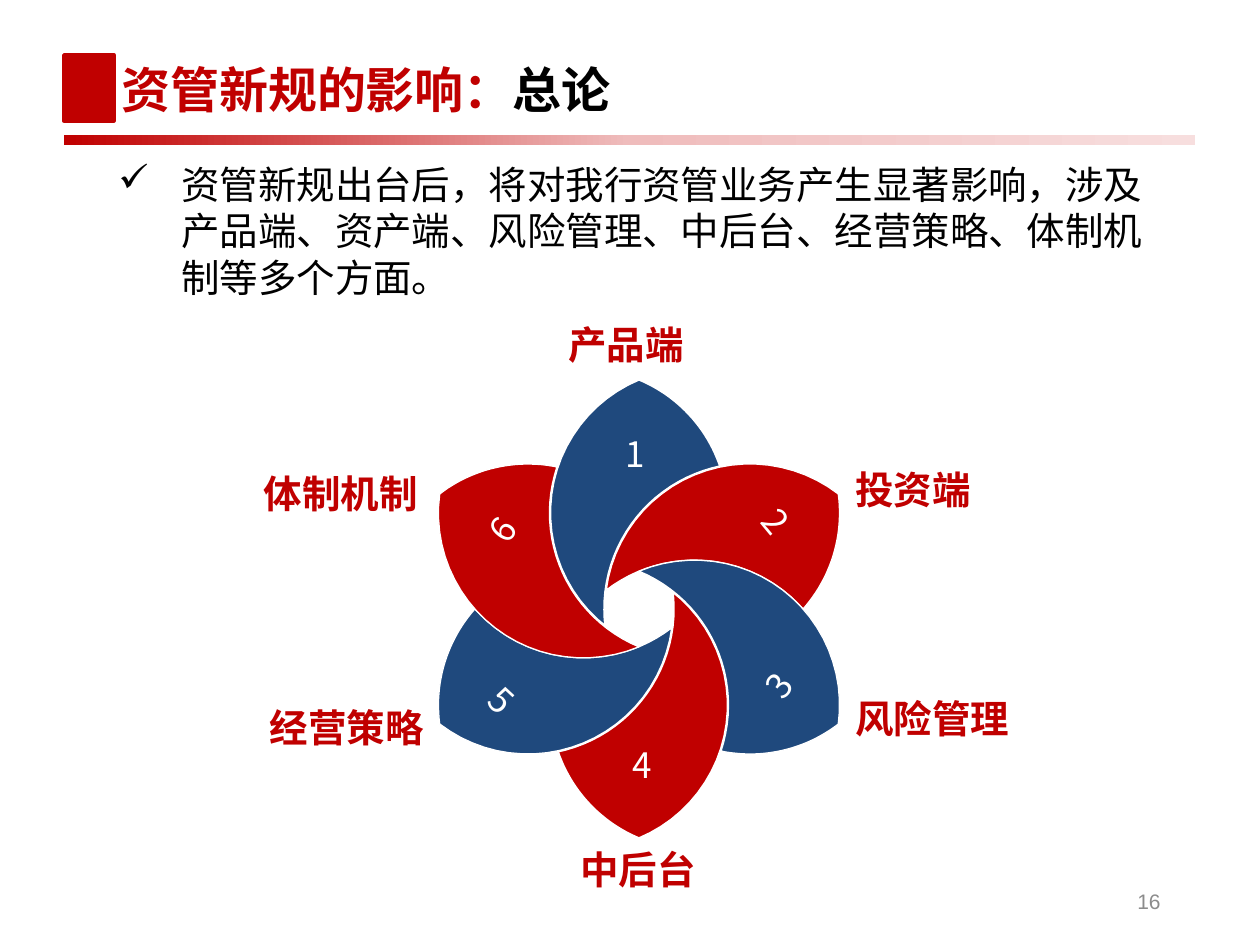
from copy import deepcopy
from dataclasses import dataclass
from math import cos, radians, sin

from lxml.etree import SubElement as Sub
from pptx import Presentation
from pptx.dml.color import RGBColor as Rgb
from pptx.enum.text import MSO_ANCHOR as Anchor, MSO_AUTO_SIZE as Fit, PP_ALIGN as Align
from pptx.oxml.ns import qn
from pptx.util import Pt

SCALE = 914400 / 126
COLORS = {"red": "C00000", "blue": "1F497D", "white": "FFFFFF", "black": "000000",
          "gray": "8C8C8C", "rose": "EFBCBC", "pale": "F7DEDE"}
CJK = "Noto Sans CJK SC"
HUB = (639, 609)   # centre of the flower
ORBIT = 111        # hub to the centre of each arc
RADIUS = 145


@dataclass
class Petal:
    num: int
    color: str
    line: float
    turn: float
    pad: tuple[int, int, int, int]
    lead: float | None = None


@dataclass
class Label:
    text: str
    box: tuple[int, int, int, int]
    align: Align


PETALS = [
    Petal(1, "blue", 2, 0, (0, 0, 0, 100)),
    Petal(4, "red", 2, 0, (0, 100, 0, 0)),
    Petal(2, "red", 0.75, 50.4, (10, 0, 0, 118), 1.2),
    Petal(3, "blue", 0.75, 308.2, (10, 100, 0, 0), 1.2),
    Petal(5, "blue", 0.75, 42.9, (0, 100, 20, 0), 1.2),
    Petal(6, "red", 0.75, 306.7, (0, 0, 0, 118), 1.2),
]
LABELS = [
    Label("产品端", (556, 315, 159, 59), Align.LEFT),
    Label("投资端", (843, 460, 159, 59), Align.LEFT),
    Label("风险管理", (843, 689, 208, 59), Align.LEFT),
    Label("中后台", (534, 840, 208, 59), Align.CENTER),
    Label("经营策略", (228, 698, 208, 59), Align.RIGHT),
    Label("体制机制", (222, 464, 208, 59), Align.RIGHT),
]
# One petal: arc centre's bearing, start and end angle on that arc, in degrees
ARCS = [(-60, -112.5, -232.5), (0, 172.5, 258.5), (-120, -18.5, -67.5)]
STEPS = 24


def px(n: float) -> int:
    return round(n * SCALE)


def rgb(name: str) -> Rgb:
    return Rgb.from_string(COLORS[name])


def style(obj, **values) -> None:
    for key, val in values.items():
        setattr(obj, key, val)


def write(para, text: str, size: float, color: str, bold=False, face=CJK) -> None:
    run = para.add_run()
    run.text = text
    style(run.font, size=Pt(size), bold=bold, name=face)
    run.font.color.rgb = rgb(color)
    Sub(run.font._element, qn("a:ea"), typeface=face)


def add_box(slide, box: tuple, **frame):
    """Add a wrapping text box and return its first paragraph."""
    text = slide.shapes.add_textbox(*map(px, box)).text_frame
    style(text, word_wrap=True, **frame)
    return text.paragraphs[0]


def add_rect(slide, box: tuple):
    rect = slide.shapes.add_shape(1, *map(px, box))
    rect.shadow.inherit = False
    return rect


def spin(x: float, y: float, deg: float) -> tuple[float, float]:
    c, s = cos(radians(deg)), sin(radians(deg))
    return x * c - y * s, x * s + y * c


def outline(num: int) -> list[tuple[float, float]]:
    """Points of a petal about the hub; each is a sixth of a turn on."""
    pts = []
    for bear, start, end in ARCS:
        cx, cy = spin(ORBIT, 0, bear)
        for i in range(STEPS):
            dx, dy = spin(RADIUS, 0, start + (end - start) * i / STEPS)
            pts.append(spin(cx + dx, cy + dy, 60 * (num - 1)))
    return pts


def add_petal(slide, petal: Petal) -> None:
    """Draw the petal in its unturned frame, then turn it into place."""
    flat = [spin(x, y, -petal.turn) for x, y in outline(petal.num)]
    mx, my = ((min(v) + max(v)) / 2 for v in zip(*flat))
    cx, cy = spin(mx, my, petal.turn)
    pts = [(px(HUB[0] + cx + x - mx), px(HUB[1] + cy + y - my)) for x, y in flat]
    pen = slide.shapes.build_freeform(*pts[0])
    pen.add_line_segments(pts[1:], close=True)
    shape = pen.convert_to_shape()
    shape.rotation = petal.turn
    shape.shadow.inherit = False
    shape.fill.solid()
    shape.fill.fore_color.rgb = rgb(petal.color)
    shape.line.color.rgb = rgb("white")
    shape.line.width = Pt(petal.line)
    sides = ("margin_left", "margin_top", "margin_right", "margin_bottom")
    text = shape.text_frame
    style(text, vertical_anchor=Anchor.MIDDLE, word_wrap=True,
          **dict(zip(sides, map(px, petal.pad))))
    para = text.paragraphs[0]
    style(para, alignment=Align.CENTER, line_spacing=petal.lead)
    write(para, str(petal.num), 20, "white")


def add_header(slide) -> None:
    mark = add_rect(slide, (64, 55, 50, 66))
    mark.fill.solid()
    mark.fill.fore_color.rgb = mark.line.color.rgb = rgb("red")
    mark.line.width = Pt(2)
    bar = add_rect(slide, (64, 135, 1131, 10))
    bar.line.fill.background()
    bar.fill.gradient()
    bar.fill.gradient_angle = 0
    stops = bar._element.spPr.find(".//" + qn("a:gsLst"))
    stops.insert(1, deepcopy(stops[0]))
    for stop, pos, name in zip(bar.fill.gradient_stops, (0, 0.5, 1), ("red", "rose", "pale")):
        stop.position = pos
        stop.color.rgb = rgb(name)
    title = add_box(slide, (109, 53, 1088, 72), auto_size=Fit.SHAPE_TO_FIT_TEXT)
    write(title, "资管新规的影响：", 28, "red", True)
    write(title, "总论", 28, "black", True)


def add_body(slide) -> None:
    para = add_box(slide, (106, 155, 1084, 152), auto_size=Fit.SHAPE_TO_FIT_TEXT)
    props = para._p.get_or_add_pPr()
    props.set("marL", str(px(63)))
    props.set("indent", str(px(-63)))
    Sub(props, qn("a:buChar"), char="✓")
    write(para, "资管新规出台后，将对我行资管业务产生显著影响，涉及产品端、资产端、"
          "风险管理、中后台、经营策略、体制机制等多个方面。", 22, "black")


def main() -> None:
    deck = Presentation()
    style(deck, slide_width=px(1260), slide_height=px(945))
    slide = deck.slides.add_slide(deck.slide_layouts[6])
    add_header(slide)
    for petal in PETALS:
        add_petal(slide, petal)
    for label in LABELS:
        para = add_box(slide, label.box, auto_size=Fit.SHAPE_TO_FIT_TEXT)
        para.alignment = label.align
        write(para, label.text, 22, "red", True)
    add_body(slide)
    page = add_box(slide, (890, 876, 283, 50), vertical_anchor=Anchor.MIDDLE)
    page.alignment = Align.RIGHT
    write(page, "16", 12, "gray", face="Arial")
    deck.save("out.pptx")


if __name__ == "__main__":
    main()
